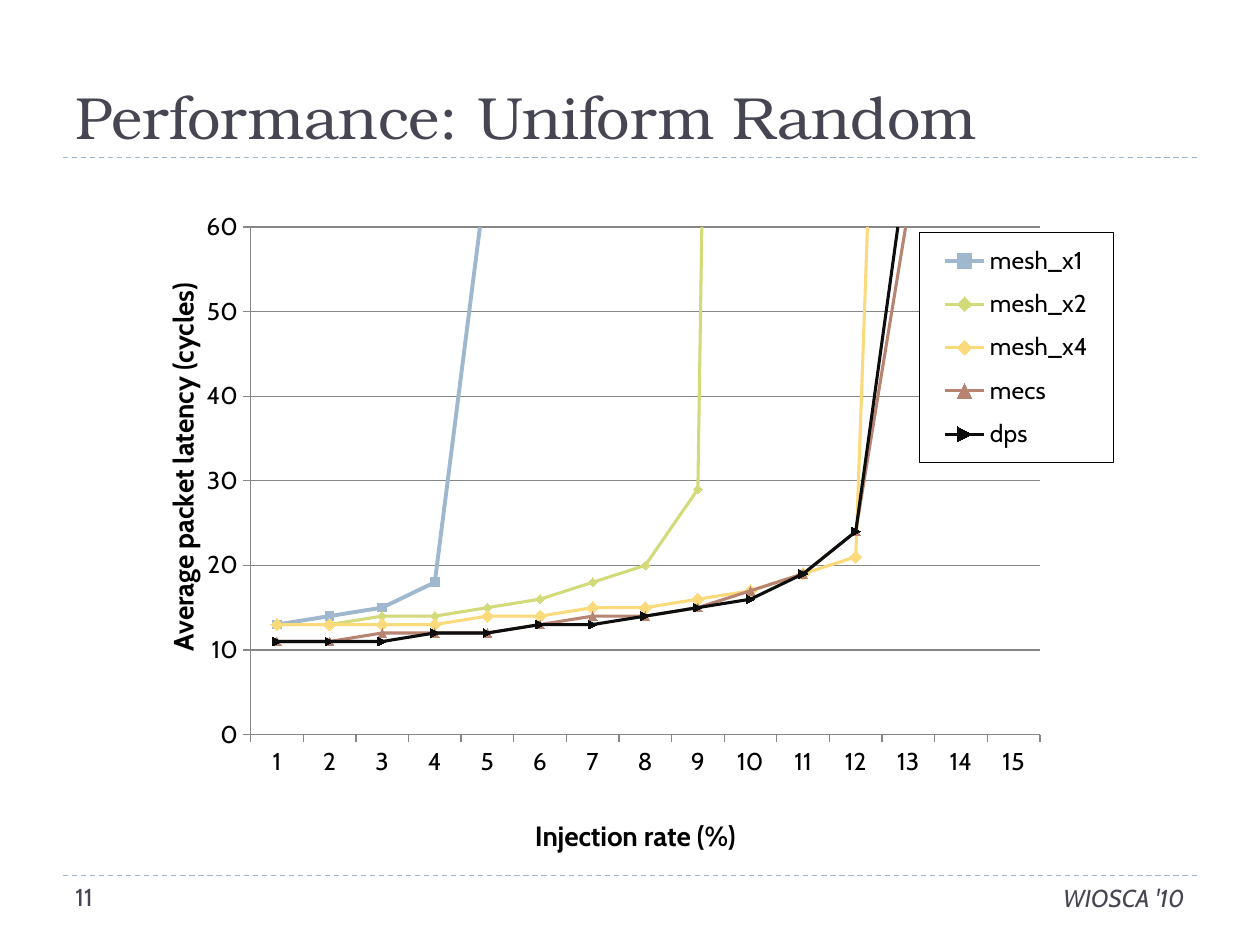
import pptx
import pptx.chart.data
import pptx.dml.color
import pptx.enum.chart
import pptx.enum.dml
import pptx.enum.shapes
import pptx.enum.text
import pptx.oxml
import pptx.oxml.ns
import pptx.util

Pt = pptx.util.Pt
Marker = pptx.enum.chart.XL_MARKER_STYLE
Align = pptx.enum.text.PP_ALIGN
Anchor = pptx.enum.text.MSO_ANCHOR
qn = pptx.oxml.ns.qn

COLORS = {
    "ink": "464653",
    "rule": "9FB8CD",
    "text": "000000",
    "grid": "868686",
    "paper": "FFFFFF",
    "mesh_x1": "9FB8CD",
    "mesh_x2": "D2DA7A",
    "mesh_x4": "FADA7A",
    "mecs": "B88472",
    "dps": "0D0D0D",
}
BODY_FONT = "Cabin"
TITLE_FONT = "TeX Gyre Bonum"

LATENCIES = {
    "mesh_x1": [13, 14, 15, 18, 67, 1552, 1818, 1886, 1914, 1924, 1940, 1953, 1955, 1956, 1967],
    "mesh_x2": [13, 13, 14, 14, 15, 16, 18, 20, 29, 441, 844, 958, 999, 1021, 1040],
    "mesh_x4": [13, 13, 13, 13, 14, 14, 15, 15, 16, 17, 19, 21, 196, 459, 563],
    "mecs": [11, 11, 12, 12, 12, 13, 14, 14, 15, 17, 19, 24, 62, 277, 453],
    "dps": [11, 11, 11, 12, 12, 13, 13, 14, 15, 16, 19, 24, 69, 212, 340],
}
SERIES_STYLES = {
    "mesh_x1": (Marker.SQUARE, 5, 2.25),
    "mesh_x2": (Marker.DIAMOND, 5, 1.75),
    "mesh_x4": (Marker.DIAMOND, 7, 1.75),
    "mecs": (Marker.TRIANGLE, 5, 1.75),
    "dps": (Marker.AUTOMATIC, 5, 1.75),
}


def rgb(name):
    return pptx.dml.color.RGBColor.from_string(COLORS[name])


def add_label(slide, box, text, size, font=BODY_FONT, align=Align.LEFT,
              anchor=Anchor.TOP, italic=False):
    label = slide.shapes.add_textbox(*map(Pt, box)).text_frame
    label.word_wrap = True
    label.vertical_anchor = anchor
    paragraph = label.paragraphs[0]
    paragraph.text = text
    paragraph.alignment = align
    paragraph.font.name = font
    paragraph.font.size = Pt(size)
    paragraph.font.italic = italic
    paragraph.font.color.rgb = rgb("ink")


def add_rule(slide, left, top, width):
    rule = slide.shapes.add_connector(
        pptx.enum.shapes.MSO_CONNECTOR.STRAIGHT,
        Pt(left), Pt(top), Pt(left + width), Pt(top))
    rule.line.color.rgb = rgb("rule")
    rule.line.width = Pt(0.75)
    rule.line.dash_style = pptx.enum.dml.MSO_LINE.DASH
    rule._element.spPr.append(pptx.oxml.parse_xml(
        f'<a:effectLst {pptx.oxml.ns.nsdecls("a")}/>'))


def add_header(slide, box):
    left, top, width, height = box
    add_label(slide, box, "Performance: Uniform Random", 34,
              font=TITLE_FONT, anchor=Anchor.BOTTOM)
    add_rule(slide, left, top + height, width)


def add_footer(slide, box):
    left, top, width, height = box
    number_width = 150
    add_rule(slide, left, top, width)
    add_label(slide, (left, top, number_width, height), "11", 14)
    add_label(slide, (left + number_width, top + 0.72, width - number_width, height),
              "WIOSCA '10", 14, align=Align.RIGHT, italic=True)


def set_layout(element, index, x, y, w=None, h=None, inner=False):
    for old_layout in element.findall(qn("c:layout")):
        element.remove(old_layout)
    settings = [("xMode", "edge"), ("yMode", "edge"), ("x", x), ("y", y)]
    if inner:
        settings.insert(0, ("layoutTarget", "inner"))
    if w is not None:
        settings += [("w", w), ("h", h)]
    body = "".join(f'<c:{tag} val="{value}"/>' for tag, value in settings)
    element.insert(index, pptx.oxml.parse_xml(
        f'<c:layout {pptx.oxml.ns.nsdecls("c")}>'
        f'<c:manualLayout>{body}</c:manualLayout></c:layout>'))


def style_axis(axis, title, x, y):
    axis.tick_labels.font.size = Pt(14)
    axis.major_tick_mark = pptx.enum.chart.XL_TICK_MARK.OUTSIDE
    axis.minor_tick_mark = pptx.enum.chart.XL_TICK_MARK.NONE
    axis.format.line.color.rgb = rgb("grid")
    axis.format.line.width = Pt(0.75)
    paragraph = axis.axis_title.text_frame.paragraphs[0]
    paragraph.text = title
    paragraph.font.size = Pt(16)
    paragraph.font.bold = True
    paragraph.font.name = BODY_FONT
    paragraph.font.color.rgb = rgb("text")
    set_layout(axis.axis_title._element, 1, x, y)


def style_series(series):
    marker_style, marker_size, line_width = SERIES_STYLES[series.name]
    color = rgb(series.name)
    series.smooth = False
    series.format.line.color.rgb = color
    series.format.line.width = Pt(line_width)
    series.marker.style = marker_style
    series.marker.size = marker_size
    series.marker.format.fill.solid()
    series.marker.format.fill.fore_color.rgb = color
    series.marker.format.line.color.rgb = color


def style_legend(chart):
    chart.has_legend = True
    legend = chart.legend
    legend.position = pptx.enum.chart.XL_LEGEND_POSITION.RIGHT
    legend.include_in_layout = False
    legend.font.size = Pt(14)
    set_layout(legend._element, 1, 0.8, 0.05, 0.19, 0.35)
    frame = pptx.oxml.parse_xml(
        f'<c:spPr {pptx.oxml.ns.nsdecls("c", "a")}>'
        f'<a:solidFill><a:srgbClr val="{COLORS["paper"]}"/></a:solidFill>'
        f'<a:ln w="{Pt(0.75)}"><a:solidFill><a:srgbClr val="{COLORS["text"]}"/>'
        '</a:solidFill></a:ln></c:spPr>')
    legend._element.find(qn("c:txPr")).addprevious(frame)


def add_latency_chart(slide, box):
    data = pptx.chart.data.CategoryChartData()
    data.categories = [str(rate) for rate in range(1, 16)]
    for name, latencies in LATENCIES.items():
        data.add_series(name, latencies)
    chart = slide.shapes.add_chart(
        pptx.enum.chart.XL_CHART_TYPE.LINE_MARKERS, *map(Pt, box), data).chart
    chart.has_title = False
    chart.font.name = BODY_FONT
    chart.font.size = Pt(10)
    chart.font.color.rgb = rgb("text")
    chart.plots[0].vary_by_categories = False
    set_layout(chart._chartSpace.chart.plotArea, 0, 0.143, 0.042, 0.775, 0.771, inner=True)
    for series in chart.plots[0].series:
        style_series(series)
    style_axis(chart.category_axis, "Injection rate (%)", 0.417, 0.93)
    latency_axis = chart.value_axis
    style_axis(latency_axis, "Average packet latency (cycles)", 0.053, 0.122)
    latency_axis.minimum_scale = 0
    latency_axis.maximum_scale = 60
    latency_axis.major_unit = 10
    latency_axis.has_major_gridlines = True
    latency_axis.major_gridlines.format.line.color.rgb = rgb("grid")
    latency_axis.major_gridlines.format.line.width = Pt(0.75)
    style_legend(chart)


def main():
    presentation = pptx.Presentation()
    presentation.slide_width = Pt(720)
    presentation.slide_height = Pt(540)
    slide = presentation.slides.add_slide(presentation.slide_layouts[6])
    add_header(slide, (36, 18, 648, 72))
    add_latency_chart(slide, (60, 114, 582, 378))
    add_footer(slide, (36, 500.4, 648, 28.8))
    presentation.save("out.pptx")


if __name__ == "__main__":
    main()
